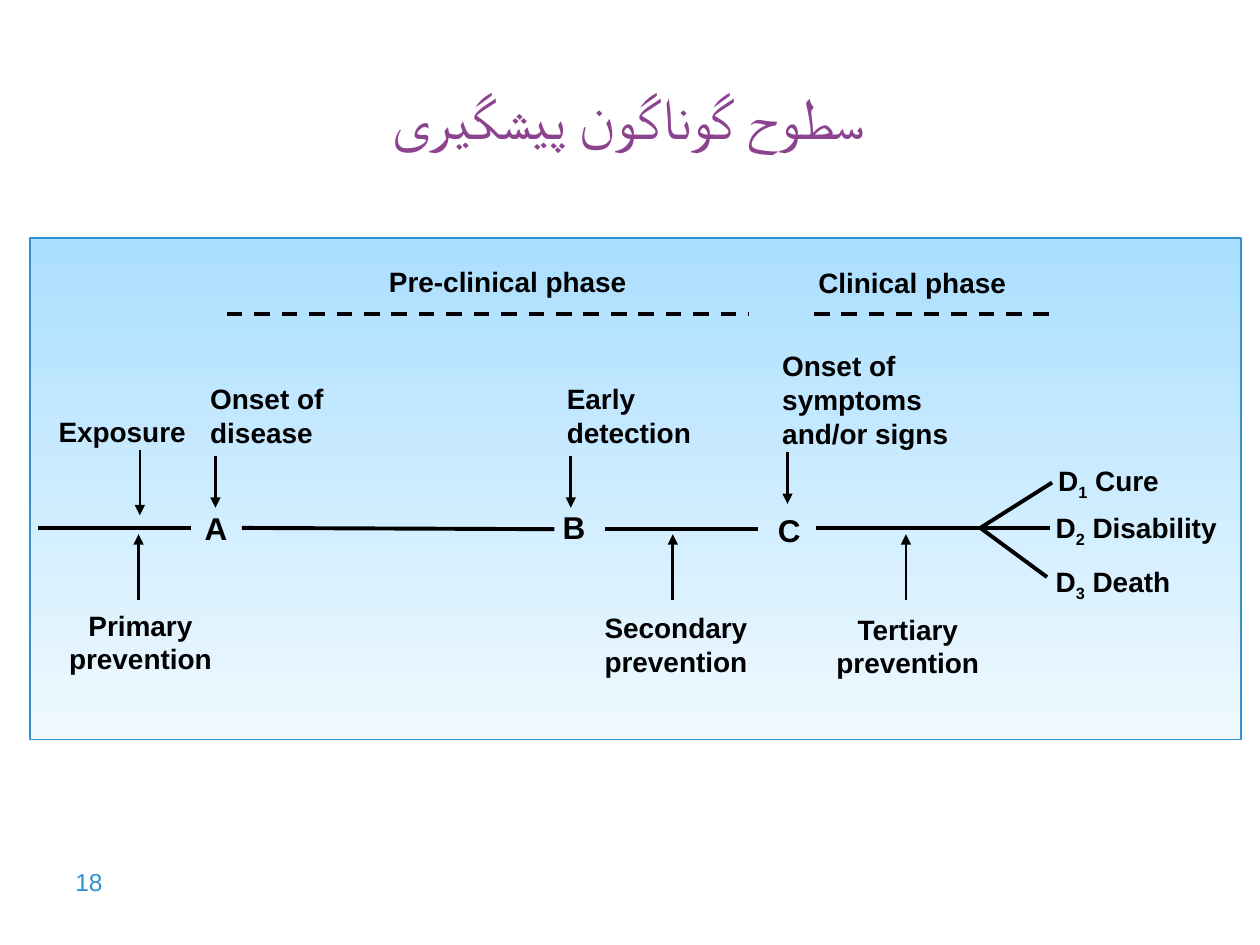
from lxml import etree
from pptx import Presentation
from pptx.dml.color import RGBColor
from pptx.enum import dml, shapes, text
from pptx.oxml.ns import qn
from pptx.util import Inches, Pt

BLACK = RGBColor(0x00, 0x00, 0x00)
BLUE = RGBColor(0x30, 0x92, 0xD1)
PURPLE = RGBColor(0x8C, 0x43, 0x8F)
PANEL_TOP = RGBColor(0xAB, 0xDF, 0xFF)
PANEL_BOTTOM = RGBColor(0xEF, 0xF9, 0xFF)

LEFT, CENTER = text.PP_ALIGN.LEFT, text.PP_ALIGN.CENTER
AXIS = 4.19
FORK = (7.78, AXIS)

# text, left, top, width, height, alignment
LABELS = [
    ("Pre-clinical phase", 2.38, 2.05, 3.3, 0.37, CENTER),
    ("Clinical phase", 5.82, 2.06, 2.84, 0.37, CENTER),
    ("Exposure", 0.32, 3.24, 1.3, 0.37, CENTER),
    ("Onset of disease", 1.57, 2.98, 1.92, 0.64, LEFT),
    ("Early detection", 4.4, 2.98, 1.51, 0.64, LEFT),
    ("Onset of symptoms and/or signs", 6.11, 2.72, 1.92, 0.9, LEFT),
    ("Primary prevention", 0.3, 4.78, 1.63, 0.64, CENTER),
    ("Secondary prevention", 4.55, 4.8, 1.63, 0.64, CENTER),
    ("Tertiary prevention", 6.39, 4.81, 1.63, 0.64, CENTER),
]
STAGES = [("A", 1.51, 3.99), ("B", 4.35, 3.98), ("C", 6.06, 4.01)]
OUTCOMES = [("1", " Cure", 8.3, 3.63), ("2", " Disability", 8.28, 4),
            ("3", " Death", 8.28, 4.43)]
TIMELINE = [
    ((0.3, AXIS), (1.52, AXIS)),
    ((1.92, AXIS), (4.4, 4.2)),
    ((4.8, 4.2), (6.02, 4.2)),
    ((6.48, AXIS), (8.33, AXIS)),
    (FORK, (8.35, 3.83)),
    (FORK, (8.31, 4.58)),
]
PHASES = [(1.8, 5.94), (6.46, 8.36)]
# x, start y, end y
EVENT_ARROWS = [(1.11, 3.57, 4.09), (1.71, 3.62, 4.03),
                (4.53, 3.62, 4.03), (6.25, 3.59, 4)]
PREVENTION_ARROWS = [(x, 4.76, 4.24) for x in (1.1, 5.34, 7.19)]


def add_label(slide, runs, left, top, width, height, align=LEFT,
              size=16, bold=True, color=BLACK):
    """Add a text box from (text, is_subscript) runs."""
    box = slide.shapes.add_textbox(
        Inches(left), Inches(top), Inches(width), Inches(height))
    box.text_frame.word_wrap = True
    paragraph = box.text_frame.paragraphs[0]
    paragraph.alignment = align
    for content, is_subscript in runs:
        run = paragraph.add_run()
        run.text = content
        font = run.font
        font.name, font.size, font.bold = "Arial", Pt(size), bold
        font.color.rgb = color
        if is_subscript:
            run._r.get_or_add_rPr().set("baseline", "-25000")


def add_line(slide, start, end, width=2.25, dashed=False, arrow=False):
    line = slide.shapes.add_connector(
        shapes.MSO_CONNECTOR.STRAIGHT,
        *(Inches(value) for value in (*start, *end)))
    line.line.color.rgb = BLACK
    line.line.width = Pt(width)
    if dashed:
        line.line.dash_style = dml.MSO_LINE.DASH
    if arrow:
        etree.SubElement(line.line._get_or_add_ln(), qn("a:tailEnd"),
                         type="triangle")
    etree.SubElement(line._element.spPr, qn("a:effectLst"))


def add_panel(slide):
    panel = slide.shapes.add_shape(
        shapes.MSO_SHAPE.RECTANGLE,
        Inches(0.24), Inches(1.89), Inches(9.61), Inches(3.98))
    panel.shadow.inherit = False
    panel.fill.gradient()
    panel.fill.gradient_angle = 270
    for stop, color, position in zip(panel.fill.gradient_stops,
                                     (PANEL_TOP, PANEL_BOTTOM), (0, 1)):
        stop.color.rgb = color
        stop.position = position
    panel.line.color.rgb = BLUE
    panel.line.width = Pt(1)


def set_title(slide, content):
    title = slide.shapes.title
    title.left, title.top = Inches(0.49), Inches(0.3)
    title.width, title.height = Inches(9), Inches(1.25)
    frame = title.text_frame
    frame.text = content
    frame.auto_size = text.MSO_AUTO_SIZE.NONE
    frame.vertical_anchor = text.MSO_ANCHOR.MIDDLE
    paragraph = frame.paragraphs[0]
    paragraph.alignment = CENTER
    paragraph.font.name, paragraph.font.size = "Cambria", Pt(33)
    paragraph.font.color.rgb = PURPLE


def main():
    presentation = Presentation()
    presentation.slide_width = Inches(10)
    presentation.slide_height = Inches(7.5)
    slide = presentation.slides.add_slide(presentation.slide_layouts[5])

    set_title(slide, "سطوح گوناگون پیشگیری")
    add_label(slide, [("18", False)], 0.5, 6.83, 2.33, 0.52,
              size=14, bold=False, color=BLUE)
    add_panel(slide)

    for content, *place in LABELS:
        add_label(slide, [(content, False)], *place)
    for letter, left, top in STAGES:
        add_label(slide, [(letter, False)], left, top, 0.41, 0.4, CENTER,
                  size=18)
    for number, outcome, left, top in OUTCOMES:
        add_label(slide, [("D", False), (number, True), (outcome, False)],
                  left, top, 1.59, 0.37)

    for start, end in TIMELINE:
        add_line(slide, start, end)
    for start_x, end_x in PHASES:
        add_line(slide, (start_x, 2.49), (end_x, 2.49), dashed=True)
    for x, start_y, end_y in EVENT_ARROWS + PREVENTION_ARROWS:
        add_line(slide, (x, start_y), (x, end_y), width=1.5, arrow=True)

    presentation.save("out.pptx")


if __name__ == "__main__":
    main()
